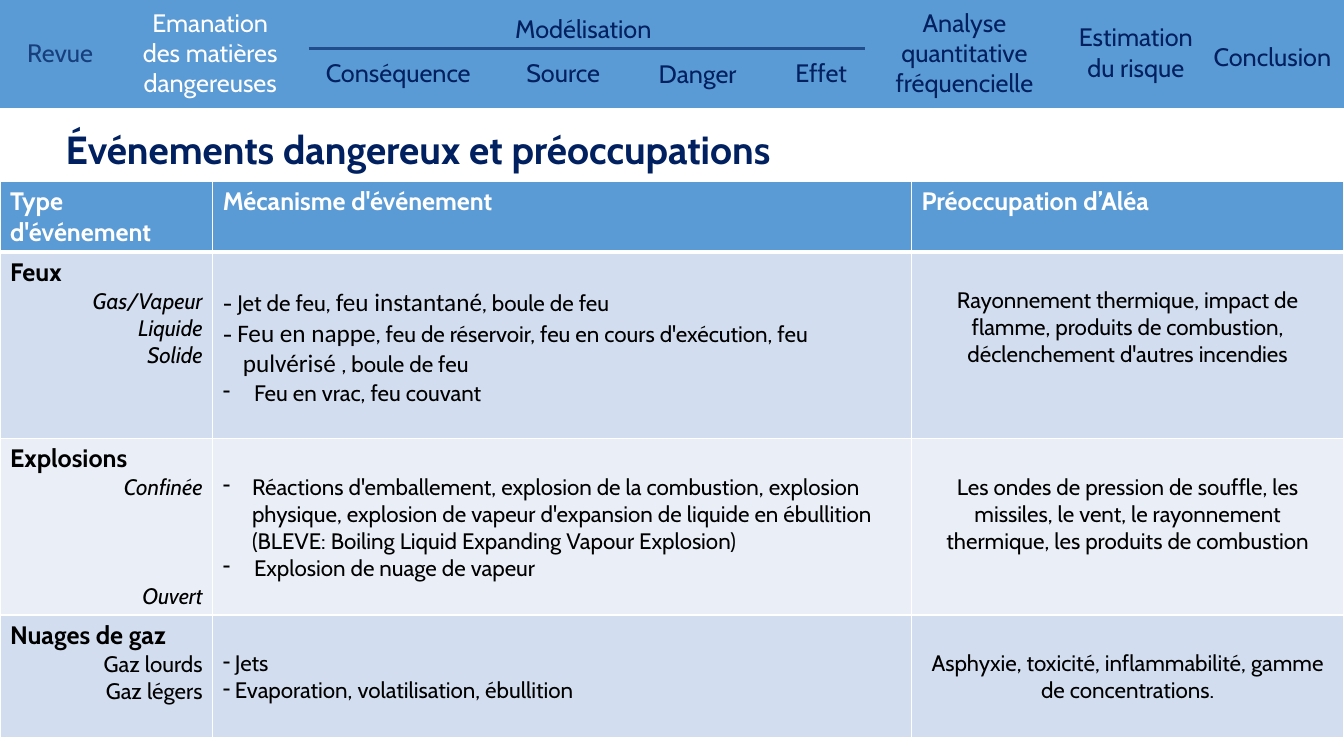
"""Build the slide on hazardous events and their concerns."""
from lxml import etree
from pptx import Presentation
from pptx.dml.color import RGBColor
from pptx.enum.shapes import MSO_CONNECTOR, MSO_SHAPE
from pptx.enum.text import MSO_ANCHOR, MSO_AUTO_SIZE, PP_ALIGN
from pptx.oxml import parse_xml
from pptx.oxml.ns import nsdecls, qn
from pptx.util import Inches, Pt

LEFT, CENTER, RIGHT = PP_ALIGN.LEFT, PP_ALIGN.CENTER, PP_ALIGN.RIGHT
MIDDLE = MSO_ANCHOR.MIDDLE
NO_AUTOFIT = MSO_AUTO_SIZE.NONE
RECTANGLE = MSO_SHAPE.RECTANGLE
STRAIGHT = MSO_CONNECTOR.STRAIGHT

BLUE = RGBColor(0x5B, 0x9B, 0xD5)
NAVY = RGBColor(0x00, 0x20, 0x60)
REVIEW_BLUE = RGBColor(0x17, 0x3F, 0x7D)
RULE_BLUE = RGBColor(0x22, 0x4D, 0x8C)
BAND_DARK = RGBColor(0xD2, 0xDE, 0xEF)
BAND_LIGHT = RGBColor(0xEA, 0xEF, 0xF7)
WHITE = RGBColor(0xFF, 0xFF, 0xFF)
BLACK = RGBColor(0x00, 0x00, 0x00)


def add_run(paragraph, text, size, color, bold=False, italic=False, font="Cabin"):
    run = paragraph.add_run()
    run.text = text
    run.font.name = font
    run.font.size = Pt(size)
    run.font.bold = bold
    run.font.italic = italic
    run.font.color.rgb = color


def next_paragraph(frame, align):
    first = frame.paragraphs[0]
    paragraph = frame.add_paragraph() if first.runs else first
    paragraph.alignment = align
    return paragraph


prs = Presentation()
prs.slide_width = Inches(13.33)
prs.slide_height = Inches(7.5)
slide = prs.slides.add_slide(prs.slide_layouts[5])

banner = slide.shapes.add_shape(RECTANGLE, 0, 0, prs.slide_width, Inches(1.07))
banner.shadow.inherit = False
banner.fill.solid()
banner.fill.fore_color.rgb = BLUE
banner.line.fill.background()

sections = [
    (["Revue"], 0.17, 0.32, 1.11, 0.4, LEFT, REVIEW_BLUE),
    (["Emanation des matières dangereuses"], 1.27, 0.02, 1.63, 1, CENTER, WHITE),
    (["Modélisation"], 3.06, 0.08, 5.45, 0.4, CENTER, NAVY),
    (["Conséquence"], 3.06, 0.52, 1.78, 0.4, CENTER, NAVY),
    (["Source"], 4.59, 0.52, 1.99, 0.4, CENTER, NAVY),
    (["Danger"], 6.1, 0.53, 1.64, 0.4, CENTER, NAVY),
    (["Effet"], 7.27, 0.52, 1.75, 0.4, CENTER, NAVY),
    (["Analyse quantitative fréquencielle"], 8.69, 0.04, 1.75, 0.96, CENTER, NAVY),
    (["Estimation", "du risque"], 10.39, 0.17, 1.75, 0.69, CENTER, NAVY),
    (["Conclusion"], 11.91, 0.36, 1.42, 0.4, CENTER, NAVY),
]
for lines, left, top, width, height, align, color in sections:
    section = slide.shapes.add_textbox(
        Inches(left), Inches(top), Inches(width), Inches(height))
    section.text_frame.word_wrap = True
    section.text_frame.vertical_anchor = MIDDLE
    for line in lines:
        add_run(next_paragraph(section.text_frame, align), line, 18, color)

modelling_rule = slide.shapes.add_connector(
    STRAIGHT, Inches(3.06), Inches(0.48), Inches(8.58), Inches(0.48))
modelling_rule.line.color.rgb = RULE_BLUE
modelling_rule.line.width = Pt(2.25)
etree.SubElement(modelling_rule._element.spPr, qn("a:effectLst"))

title = slide.shapes.title
title.left, title.top = Inches(0.55), Inches(1.15)
title.width, title.height = Inches(12.26), Inches(0.65)
title.text_frame.auto_size = NO_AUTOFIT
title.text_frame.vertical_anchor = MIDDLE
add_run(next_paragraph(title.text_frame, LEFT),
        "Événements dangereux et préoccupations", 28, NAVY, bold=True)

headings = ["Type d'événement", "Mécanisme d'événement", "Préoccupation d’Aléa"]
column_widths = [2.11, 6.93, 4.29]
row_heights = [0.7, 1.85, 1.75, 1.22]

# each event: name, italic kinds, kinds with space before, mechanisms, concern
events = [
    ("Feux", True, [("Gas/Vapeur", 0), ("Liquide", 0), ("Solide", 0)],
     [(0, False, [("- Jet de feu, ", 16, "Cabin"),
                  ("feu instantané", 18, "Calibri"),
                  (", boule de feu", 16, "Cabin")]),
      (0.2, False, [("- ", 16, "Cabin"),
                    ("Feu en nappe", 18, "Calibri"),
                    (", feu de réservoir, feu en cours d'exécution, feu ", 16, "Cabin"),
                    ("pulvérisé ", 18, "Calibri"),
                    (", boule de feu", 16, "Cabin")]),
      (0.31, True, [("Feu en vrac, feu couvant", 16, "Cabin")])],
     "Rayonnement thermique, impact de flamme, produits de combustion, "
     "déclenchement d'autres incendies"),
    ("Explosions", True, [("Confinée", 0), ("Ouvert", 58)],
     [(0.29, True, [("Réactions d'emballement, explosion de la combustion, explosion "
                     "physique, explosion de vapeur d'expansion de liquide en ébullition "
                     "(BLEVE: Boiling Liquid Expanding Vapour Explosion)", 16, "Cabin")]),
      (0.31, True, [("Explosion de nuage de vapeur", 16, "Cabin")])],
     "Les ondes de pression de souffle, les missiles, le vent, le rayonnement "
     "thermique, les produits de combustion"),
    ("Nuages de gaz", False, [("Gaz lourds", 0), ("Gaz légers", 0)],
     [(0.12, True, [("Jets", 16, "Cabin")]),
      (0.12, True, [("Evaporation, volatilisation, ébullition", 16, "Cabin")])],
     "Asphyxie, toxicité, inflammabilité, gamme de concentrations."),
]

event_table = slide.shapes.add_table(
    len(row_heights), len(column_widths), 0, Inches(1.8),
    prs.slide_width, Inches(sum(row_heights))).table
for column, width in zip(event_table.columns, column_widths):
    column.width = Inches(width)
for row, height in zip(event_table.rows, row_heights):
    row.height = Inches(height)

for column, heading in enumerate(headings):
    add_run(next_paragraph(event_table.cell(0, column).text_frame, LEFT),
            heading, 18, WHITE, bold=True)

for row, (name, italic, kinds, mechanisms, concern) in enumerate(events, start=1):
    type_cell, mechanism_cell, concern_cell = event_table.rows[row].cells
    mechanism_cell.margin_top = concern_cell.margin_top = Inches(0.35)

    add_run(next_paragraph(type_cell.text_frame, LEFT), name, 18, BLACK, bold=True)
    for kind, space_before in kinds:
        paragraph = next_paragraph(type_cell.text_frame, RIGHT)
        paragraph.space_before = Pt(space_before)
        add_run(paragraph, kind, 16, BLACK, italic=italic)

    for hanging, bulleted, pieces in mechanisms:
        paragraph = next_paragraph(mechanism_cell.text_frame, LEFT)
        properties = paragraph._p.get_or_add_pPr()
        properties.set("marL", str(Inches(hanging)))
        properties.set("indent", str(-Inches(hanging)))
        if bulleted:
            etree.SubElement(properties, qn("a:buChar"), char="-")
        for text, size, font in pieces:
            add_run(paragraph, text, size, BLACK, font=font)

    add_run(next_paragraph(concern_cell.text_frame, CENTER), concern, 16, BLACK)

for row, fill in enumerate([BLUE, BAND_DARK, BAND_LIGHT, BAND_DARK]):
    for cell in event_table.rows[row].cells:
        cell.fill.solid()
        cell.fill.fore_color.rgb = fill
        top_width, bottom_width = (3 if row == 1 else 1), (3 if row == 0 else 1)
        edges = [("lnL", 1), ("lnR", 1), ("lnT", top_width), ("lnB", bottom_width)]
        for position, (edge, width) in enumerate(edges):
            cell._tc.get_or_add_tcPr().insert(position, parse_xml(
                f'<a:{edge} {nsdecls("a")} w="{Pt(width)}"><a:solidFill>'
                f'<a:srgbClr val="{WHITE}"/></a:solidFill></a:{edge}>'))

prs.save("out.pptx")
